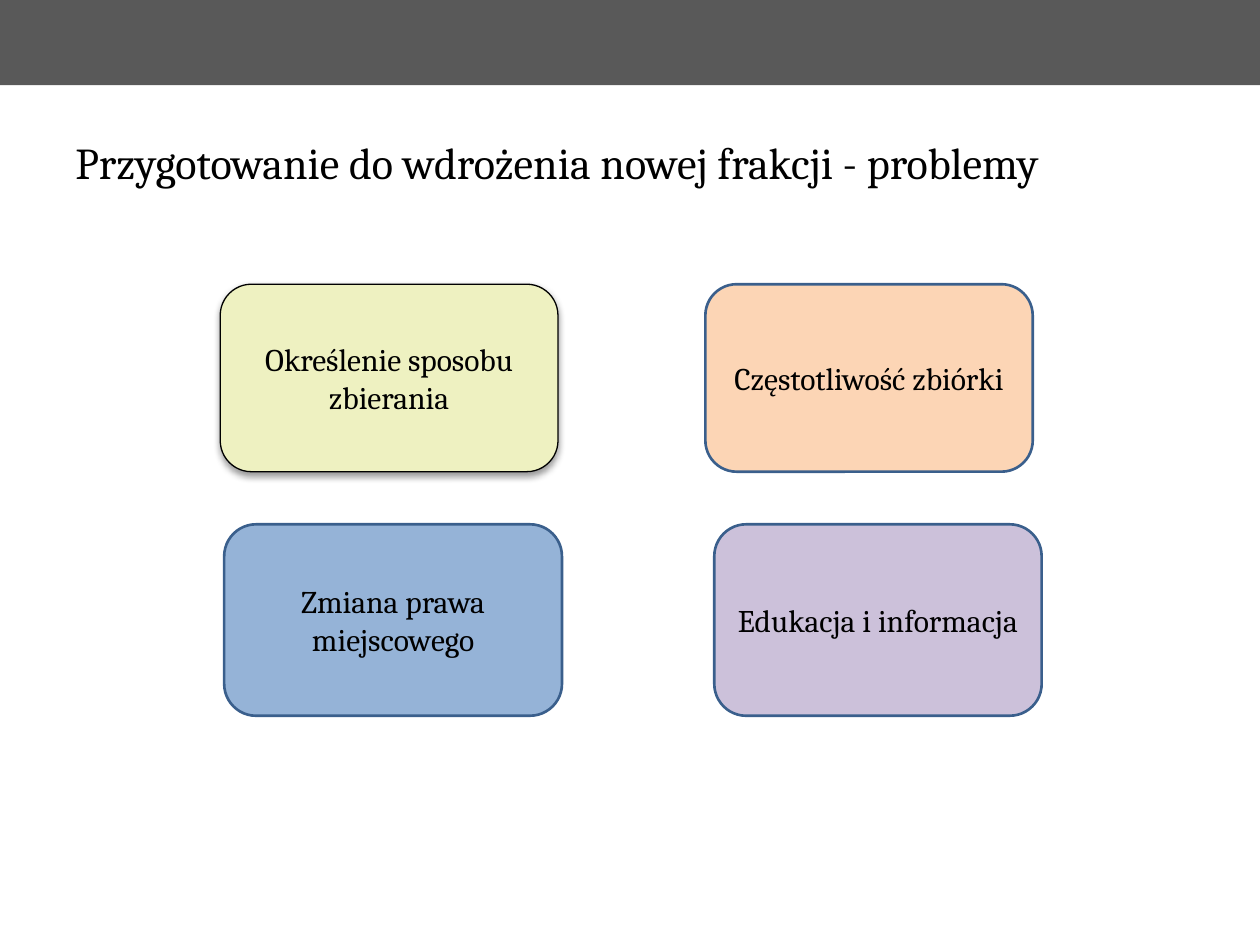
from dataclasses import dataclass

from lxml import etree
from pptx import Presentation
from pptx.dml.color import RGBColor
from pptx.enum.shapes import MSO_SHAPE
from pptx.enum.text import MSO_ANCHOR, PP_ALIGN
from pptx.oxml.ns import qn
from pptx.util import Cm, Pt

RECT, ROUND = MSO_SHAPE.RECTANGLE, MSO_SHAPE.ROUNDED_RECTANGLE
MIDDLE = MSO_ANCHOR.MIDDLE
LEFT, CENTER = PP_ALIGN.LEFT, PP_ALIGN.CENTER


@dataclass(frozen=True)
class Theme:
    font: str = "Cambria"
    title: float = 25.2
    body: float = 18
    ink: str = "000000"
    band: str = "595959"
    edge: str = "3A5F8C"
    lime: str = "EEF1C1"
    peach: str = "FCD5B5"
    blue: str = "95B3D7"
    lilac: str = "CCC1DA"


THEME = Theme()


def rgb(code):
    return RGBColor.from_string(code)


def write(shape, text, size, align):
    frame = shape.text_frame
    frame.word_wrap = True
    frame.vertical_anchor = MIDDLE
    para = frame.paragraphs[0]
    para.alignment = align
    run = para.add_run()
    run.text = text
    run.font.name = THEME.font
    run.font.size = Pt(size)
    run.font.color.rgb = rgb(THEME.ink)
    return para


def block(slide, kind, box, fill):
    shape = slide.shapes.add_shape(kind, *map(Cm, box))
    shape.shadow.inherit = False
    shape.fill.solid()
    shape.fill.fore_color.rgb = rgb(fill)
    shape.line.fill.background()
    return shape


def shade(shape):
    """Add a soft shadow that falls straight down."""
    effects = shape._element.spPr.find(qn("a:effectLst"))
    outer = etree.SubElement(
        effects, qn("a:outerShdw"), blurRad=str(Pt(4.1)), dist=str(Pt(2)),
        dir="5400000", rotWithShape="0")
    color = etree.SubElement(outer, qn("a:srgbClr"), val=THEME.ink)
    etree.SubElement(color, qn("a:alpha"), val="40000")


def header(slide, box):
    left, top, width, _ = box
    block(slide, RECT, (left, top, width, 1.72), THEME.band)
    title = slide.shapes.add_textbox(
        Cm(left + 1.27), Cm(top + 2.54), Cm(width - 2.54), Cm(1.57))
    para = write(title, "Przygotowanie do wdrożenia nowej frakcji - problemy",
                 THEME.title, LEFT)
    para.line_spacing = 0.9


def card(slide, box, text, fill, edge, weight):
    shape = block(slide, ROUND, box, fill)
    shape.line.color.rgb = rgb(edge)
    shape.line.width = Pt(weight)
    write(shape, text, THEME.body, CENTER)
    return shape


def cards(slide, box):
    """Place two rows of cards; the lower row is shifted slightly right."""
    left, top, width, height = box
    wide, slim = 6.81, 6.6
    right = left + width - slim
    high, low = 3.78, 3.86
    base = top + height - low
    first = card(slide, (left, top, wide, high),
                 "Określenie sposobu zbierania", THEME.lime, THEME.ink, 0.75)
    shade(first)
    rest = (
        ((right - 0.18, top, slim, high), "Częstotliwość zbiórki", THEME.peach),
        ((left + 0.08, base, wide, low), "Zmiana prawa miejscowego", THEME.blue),
        ((right, base, slim, low), "Edukacja i informacja", THEME.lilac),
    )
    for area, text, fill in rest:
        card(slide, area, text, fill, THEME.edge, 1.5)


def main():
    deck = Presentation()
    deck.slide_width, deck.slide_height = Cm(25.4), Cm(19.05)
    slide = deck.slides.add_slide(deck.slide_layouts[6])
    header(slide, (0, 0, 25.4, 4.11))
    cards(slide, (4.44, 5.73, 16.56, 8.7))
    deck.save("out.pptx")


if __name__ == "__main__":
    main()
